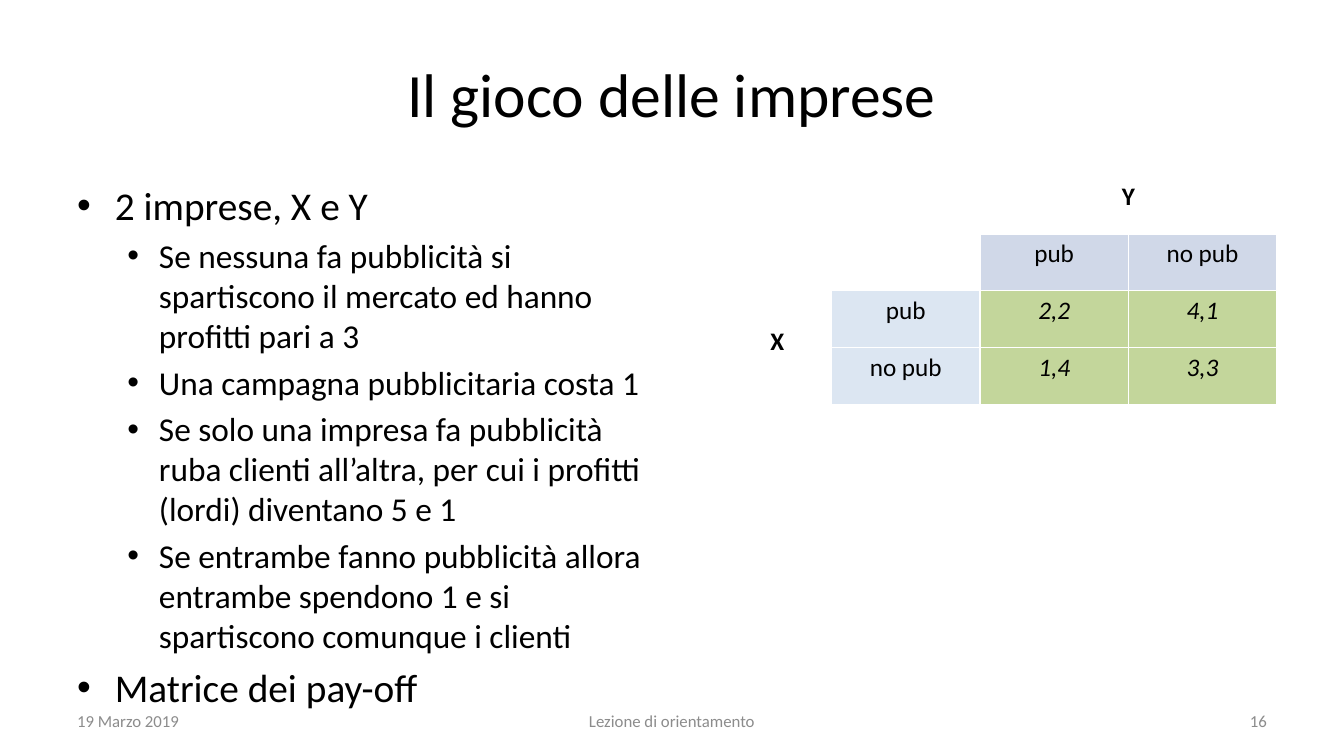
import pptx
import pptx.util
import pptx.dml.color
import pptx.enum.text
import pptx.oxml
import pptx.oxml.ns
from lxml import etree

Pt = pptx.util.Pt
ALIGN = pptx.enum.text.PP_ALIGN
ANCHOR = pptx.enum.text.MSO_ANCHOR

# Content
TITLE = "Il gioco delle imprese"
POINTS = [
    (0, "2 imprese, X e Y"),
    (1, "Se nessuna fa pubblicità si spartiscono il mercato ed hanno profitti pari a 3"),
    (1, "Una campagna pubblicitaria costa 1"),
    (1, "Se solo una impresa fa pubblicità ruba clienti all’altra, per cui i profitti (lordi) diventano 5 e 1"),
    (1, "Se entrambe fanno pubblicità allora entrambe spendono 1 e si spartiscono comunque i clienti"),
    (0, "Matrice dei pay-off"),
]
GAME = [
    ["", "", "Y", ""],
    ["", "", "pub", "no pub"],
    ["X", "pub", "2,2", "4,1"],
    ["", "no pub", "1,4", "3,3"],
]
FOOT = [
    ("19 Marzo 2019", 48, 224, ALIGN.LEFT),
    ("Lezione di orientamento", 328, 304, ALIGN.CENTER),
    ("16", 688, 224, ALIGN.RIGHT),
]
COLORS = {"text": "000000", "foot": "8C8C8C", "blank": "FFFFFF",
          "top": "D0D8E8", "side": "DCE6F2", "pay": "C3D69B"}
# Per level: size, left margin, hanging indent
LEVELS = [(28.1, 27, 27), (23.8, 58.5, 22.5)]


def rgb(name):
    return pptx.dml.color.RGBColor.from_string(COLORS[name])


def style(par, size, color="text", align=ALIGN.LEFT, bold=False, italic=False):
    par.alignment = align
    for run in par.runs:
        font = run.font
        font.name, font.size = "Calibri", Pt(size)
        font.bold, font.italic = bold, italic
        font.color.rgb = rgb(color)


def add_box(left, top, width, height, anchor):
    frame = slide.shapes.add_textbox(Pt(left), Pt(top), Pt(width), Pt(height)).text_frame
    frame.word_wrap = True
    frame.vertical_anchor = anchor
    return frame


def add_edge(cell, side, width):
    props = cell._tc.get_or_add_tcPr()
    props.append(pptx.oxml.parse_xml(
        f'<a:ln{side} {pptx.oxml.ns.nsdecls("a")} w="{Pt(width)}"><a:solidFill>'
        f'<a:srgbClr val="{COLORS["blank"]}"/></a:solidFill></a:ln{side}>'))


def cell_fill(row, col):
    if row > 1 and col > 1:
        return "pay"
    if row == 1 and col > 1:
        return "top"
    return "side" if row > 1 and col == 1 else "blank"


deck = pptx.Presentation()
deck.slide_width, deck.slide_height = Pt(960), Pt(540)
slide = deck.slides.add_slide(deck.slide_layouts[5])

# Title
title = slide.shapes.title
title.left, title.top, title.width, title.height = Pt(48), Pt(21.6), Pt(864), Pt(90)
title.text_frame.text = TITLE
title.text_frame.vertical_anchor = ANCHOR.MIDDLE
style(title.text_frame.paragraphs[0], 44, align=ALIGN.CENTER)

# Bulleted points
body = add_box(48, 126, 424, 356.4, ANCHOR.TOP)
body.text = "\n".join(text for _, text in POINTS)
for par, (level, _) in zip(body.paragraphs, POINTS):
    size, margin, hang = LEVELS[level]
    style(par, size)
    par.level = level
    par.space_before = Pt(size * 0.2)
    props = par._p.get_or_add_pPr()
    props.set("marL", str(Pt(margin)))
    props.set("indent", str(-Pt(hang)))
    font = etree.SubElement(props, pptx.oxml.ns.qn("a:buFont"))
    font.set("typeface", "Arial")
    mark = etree.SubElement(props, pptx.oxml.ns.qn("a:buChar"))
    mark.set("char", "•")

# Pay-off matrix
grid = slide.shapes.add_table(4, 4, Pt(488), Pt(126), Pt(424), Pt(163.2)).table
grid.first_row = grid.horz_banding = False
for row, texts in enumerate(GAME):
    for col, text in enumerate(texts):
        cell = grid.cell(row, col)
        for side in "LRTB":
            add_edge(cell, side, 3 if (row, side) in [(0, "B"), (1, "T")] else 1)
        name = cell_fill(row, col)
        cell.fill.solid()
        cell.fill.fore_color.rgb = rgb(name)
        cell.margin_left = cell.margin_right = Pt(9.6)
        cell.margin_top = cell.margin_bottom = Pt(3.6)
        cell.text_frame.text = text
        style(cell.text_frame.paragraphs[0], 18, align=ALIGN.CENTER,
              bold=text in ("X", "Y"), italic=name == "pay")
grid.cell(0, 2).merge(grid.cell(0, 3))
grid.cell(2, 0).merge(grid.cell(3, 0))
# Row player's label sits lower and nearer to its strategies
grid.cell(2, 0).margin_top = Pt(25.6)
grid.cell(2, 0).margin_left = Pt(38)

# Footer
for text, left, width, align in FOOT:
    frame = add_box(left, 500.5, width, 28.8, ANCHOR.MIDDLE)
    frame.text = text
    style(frame.paragraphs[0], 12, "foot", align)

deck.save("out.pptx")
